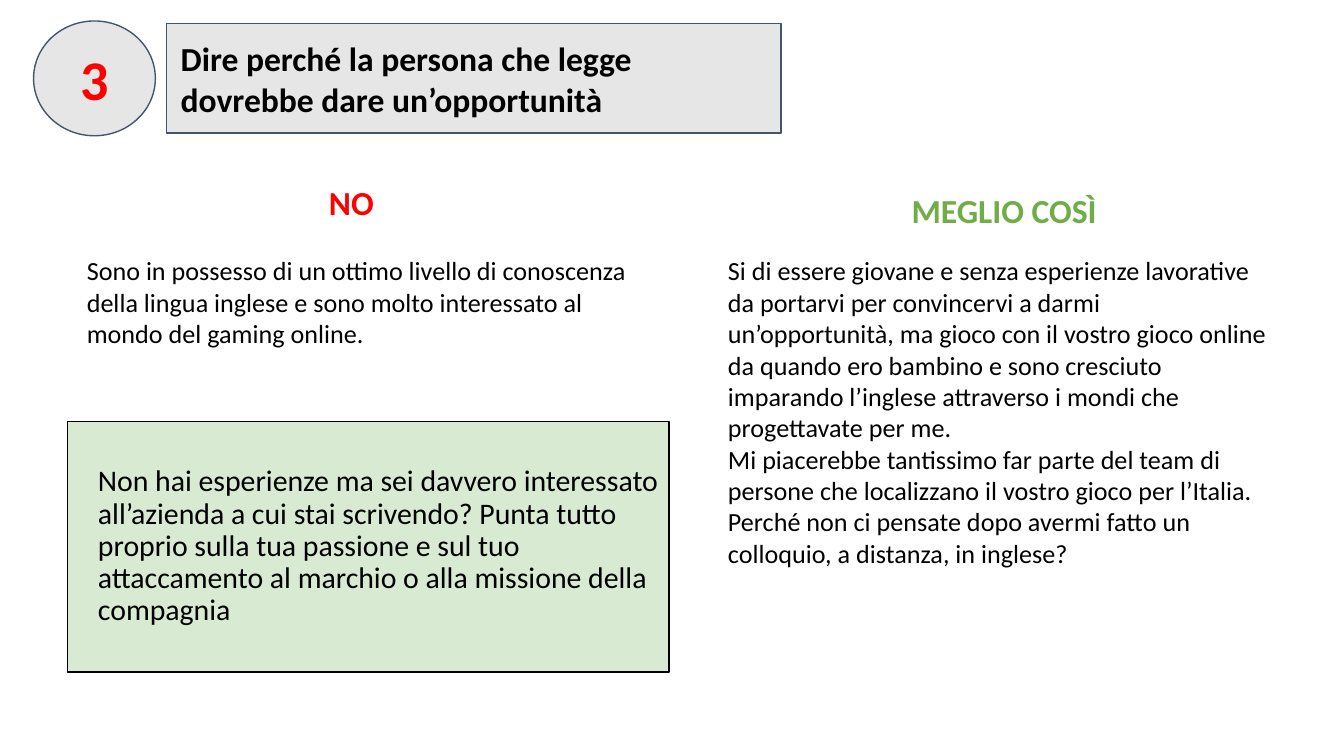
from lxml.etree import SubElement
from pptx import Presentation
from pptx.dml.color import RGBColor
from pptx.enum.shapes import MSO_SHAPE
from pptx.enum.text import MSO_ANCHOR, MSO_AUTO_SIZE, PP_ALIGN
from pptx.oxml.ns import qn
from pptx.util import Pt

SCALE = 9525
COLORS = {
    "black": "000000", "red": "FF0000", "green": "70AD47",
    "mint": "D9EAD3", "gray": "E7E6E6", "slate": "44546A",
}
TITLE = "Dire perché la persona che legge dovrebbe dare un’opportunità"
WEAK = ("Sono in possesso di un ottimo livello di conoscenza della lingua inglese "
        "e sono molto interessato al mondo del gaming online.")
STRONG = (
    "Si di essere giovane e senza esperienze lavorative da portarvi per convincervi "
    "a darmi un’opportunità, ma gioco con il vostro gioco online da quando ero bambino "
    "e sono cresciuto imparando l’inglese attraverso i mondi che progettavate per me. \v"
    "Mi piacerebbe tantissimo far parte del team di persone che localizzano il vostro "
    "gioco per l’Italia. Perché non ci pensate dopo avermi fatto un colloquio, "
    "a distanza, in inglese? ")
ADVICE = ("Non hai esperienze ma sei davvero interessato all’azienda a cui stai scrivendo? "
          "Punta tutto proprio sulla tua passione e sul tuo attaccamento al marchio "
          "o alla missione della compagnia")


def px(size):
    """Turn px into EMU."""
    return size * SCALE


def tint(name):
    """Return a named colour."""
    return RGBColor.from_string(COLORS[name])


def place(shape, box):
    """Move and size a shape."""
    shape.left, shape.top, shape.width, shape.height = map(px, box)
    return shape


def paint(shape, fill, line):
    """Fill and outline a shape."""
    shape.fill.solid()
    shape.fill.fore_color.rgb = tint(fill)
    shape.line.color.rgb = tint(line)
    shape.line.width = Pt(0.75)


def write(shape, text, size=14, color="black", bold=False, align=PP_ALIGN.LEFT,
          anchor=MSO_ANCHOR.TOP, inset=(10, 5), indent=0, space=1.0):
    """Write one formatted paragraph into a shape."""
    frame = shape.text_frame
    frame.word_wrap = True
    frame.auto_size = MSO_AUTO_SIZE.NONE
    frame.vertical_anchor = anchor
    frame.margin_left = frame.margin_right = px(inset[0])
    frame.margin_top = frame.margin_bottom = px(inset[1])
    frame.text = text
    para = frame.paragraphs[0]
    para.alignment = align
    para.line_spacing = space
    para.space_before = para.space_after = Pt(0)
    props = para._p.get_or_add_pPr()
    props.set("marL", str(px(indent)))
    props.set("indent", "0")
    SubElement(props, qn("a:buNone"))
    for run in para.runs:
        font = run.font
        font.name, font.size, font.bold = "Calibri", Pt(size), bold
        font.color.rgb = tint(color)


def add_head(holder, box, text, color):
    """Set a column heading."""
    write(place(holder, box), text, size=18, color=color, bold=True,
          align=PP_ALIGN.CENTER, inset=(7, 7), space=0.9)


def add_note(slide, box, text):
    """Add a plain text box."""
    write(slide.shapes.add_textbox(*map(px, box)), text)


def add_badge(slide, box, text):
    """Add the round step number."""
    badge = slide.shapes.add_shape(MSO_SHAPE.OVAL, *map(px, box))
    badge.shadow.inherit = False
    paint(badge, "gray", "slate")
    write(badge, text, size=30, color="red", bold=True, align=PP_ALIGN.CENTER,
          anchor=MSO_ANCHOR.MIDDLE, inset=(10, 10))


def main():
    """Build and save the slide."""
    deck = Presentation()
    deck.slide_width, deck.slide_height = px(960), px(540)
    slide = deck.slides.add_slide(deck.slide_layouts[4])
    title, left, advice, right, spare = slide.placeholders
    spare.element.getparent().remove(spare.element)

    paint(place(title, (119, 17, 439, 78)), "gray", "slate")
    write(title, TITLE, size=18, bold=True, anchor=MSO_ANCHOR.MIDDLE, inset=(10, 10))
    add_badge(slide, (24, 15, 87, 82), "3")

    add_head(left, (48, 126, 406, 65), "NO", "red")
    add_head(right, (517, 132, 406, 38), "MEGLIO COSÌ ", "green")
    add_note(slide, (52, 177, 406, 78), WEAK)
    add_note(slide, (510, 177, 406, 281), STRONG)

    paint(place(advice, (48, 301, 430, 179)), "mint", "black")
    write(advice, ADVICE, size=16, anchor=MSO_ANCHOR.MIDDLE, inset=(7, 7),
          indent=15, space=0.9)
    deck.save("out.pptx")


if __name__ == "__main__":
    main()
